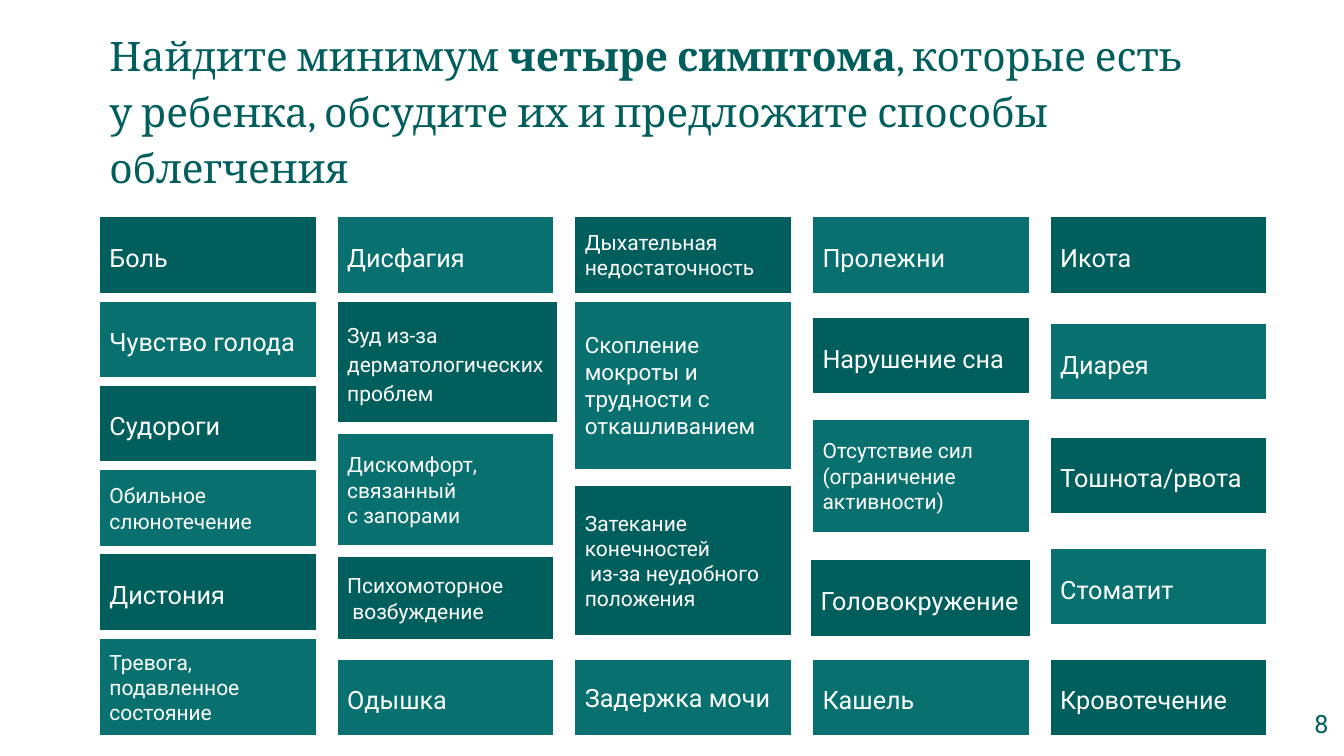
"""Build the slide with a board of symptom cards in five columns."""
from dataclasses import dataclass

from pptx import Presentation
from pptx.dml.color import RGBColor
from pptx.enum.shapes import MSO_SHAPE as Shape
from pptx.enum.text import MSO_ANCHOR as Anchor, PP_ALIGN as Align
from pptx.util import Cm, Pt


@dataclass(frozen=True)
class Theme:
    dark: str = "005E5C"
    light: str = "087170"
    white: str = "FFFFFF"
    heading_font: str = "Cambria"
    body_font: str = "Roboto"
    heading: int = 29
    large: int = 18
    medium: int = 16
    small: int = 15
    loose: float = 1.15
    outline: float = 0.75


@dataclass(frozen=True)
class Card:
    text: str
    top: float
    height: float = 1.93
    size: int = Theme.large
    spacing: float = Theme.loose
    extra: float = 0
    shift: float = 0


THEME = Theme()
SMALL = {"size": THEME.small, "spacing": 1}

TITLE = [
    ("Найдите минимум ", False),
    ("четыре симптома", True),
    (", которые есть у ребенка, обсудите их и предложите способы облегчения", False),
]
PAGE_NUMBER = "8"
FIRST_TOP, SECOND_TOP, LAST_TOP = 5.46, 7.59, 16.61
COLUMNS = [
    [
        Card("Боль", FIRST_TOP),
        Card("Чувство голода", SECOND_TOP),
        Card("Судороги", 9.71),
        Card("Обильное слюнотечение", 11.84, **SMALL),
        Card("Дистония", 13.96),
        Card("Тревога, подавленное состояние", 16.09, 2.44, **SMALL),
    ],
    [
        Card("Дисфагия", FIRST_TOP),
        Card("Зуд из-за\nдерматологических проблем", SECOND_TOP, 3.07, THEME.small, extra=0.08),
        Card("Дискомфорт, связанный\nс запорами", 10.92, 2.84, **SMALL),
        Card("Психомоторное\n возбуждение", 14.03, 2.08, **SMALL),
        Card("Одышка", LAST_TOP),
    ],
    [
        Card("Дыхательная недостаточность", FIRST_TOP, **SMALL),
        Card("Скопление мокроты и трудности с откашливанием", SECOND_TOP, 4.24, THEME.medium, 1),
        Card("Затекание конечностей\n из-за неудобного положения", 12.24, 3.78, **SMALL),
        Card("Задержка мочи", LAST_TOP, spacing=1),
    ],
    [
        Card("Пролежни", FIRST_TOP),
        Card("Нарушение сна", 8),
        Card("Отсутствие сил\n(ограничение активности)", 10.57, 2.84, **SMALL),
        Card("Головокружение", 14.1, extra=0.08, shift=-0.05),
        Card("Кашель", LAST_TOP),
    ],
    [
        Card("Икота", FIRST_TOP),
        Card("Диарея", 8.15),
        Card("Тошнота/рвота", 11.02),
        Card("Стоматит", 13.82),
        Card("Кровотечение", LAST_TOP),
    ],
]
BOARD_LEFT, COLUMN_STEP, CARD_WIDTH, INSET = 2.51, 5.99, 5.46, 0.25


def color(code):
    return RGBColor.from_string(code)


def prepare(box, anchor, vertical_inset=INSET):
    frame = box.text_frame
    frame.word_wrap = True
    frame.vertical_anchor = anchor
    frame.margin_left = frame.margin_right = Cm(INSET)
    frame.margin_top = frame.margin_bottom = Cm(vertical_inset)
    return frame.paragraphs[0]


def add_span(para, text, font, size, code, bold=False):
    for index, line in enumerate(text.split("\n")):
        if index:
            para.add_line_break()
        span = para.add_run()
        span.text = line
        span.font.name = font
        span.font.size = Pt(size)
        span.font.bold = bold
        span.font.color.rgb = color(code)


def add_title(page):
    box = page.shapes.add_textbox(Cm(BOARD_LEFT), Cm(0), Cm(27.69), Cm(5.41))
    para = prepare(box, Anchor.MIDDLE, 0.13)
    para.line_spacing = THEME.loose
    for text, bold in TITLE:
        add_span(para, text, THEME.heading_font, THEME.heading, THEME.dark, bold)


def add_page_number(page):
    box = page.shapes.add_textbox(Cm(31.7), Cm(17.6), Cm(2.03), Cm(1.45))
    para = prepare(box, Anchor.TOP)
    para.alignment = Align.RIGHT
    add_span(para, PAGE_NUMBER, THEME.body_font, THEME.large, THEME.dark)


def add_card(page, card, left, fill):
    box = page.shapes.add_shape(
        Shape.RECTANGLE, Cm(left + card.shift), Cm(card.top),
        Cm(CARD_WIDTH + card.extra), Cm(card.height))
    box.shadow.inherit = False
    box.fill.solid()
    box.fill.fore_color.rgb = color(fill)
    box.line.color.rgb = color(THEME.white)
    box.line.width = Pt(THEME.outline)
    para = prepare(box, Anchor.MIDDLE)
    para.alignment = Align.LEFT
    para.line_spacing = card.spacing
    add_span(para, card.text, THEME.body_font, card.size, THEME.white)


def main():
    deck = Presentation()
    deck.slide_width, deck.slide_height = Cm(33.87), Cm(19.05)
    page = deck.slides.add_slide(deck.slide_layouts[6])
    add_title(page)
    add_page_number(page)
    for column, cards in enumerate(COLUMNS):
        for row, card in enumerate(cards):
            fill = THEME.light if (column + row) % 2 else THEME.dark
            add_card(page, card, BOARD_LEFT + column * COLUMN_STEP, fill)
    deck.save("out.pptx")


if __name__ == "__main__":
    main()
